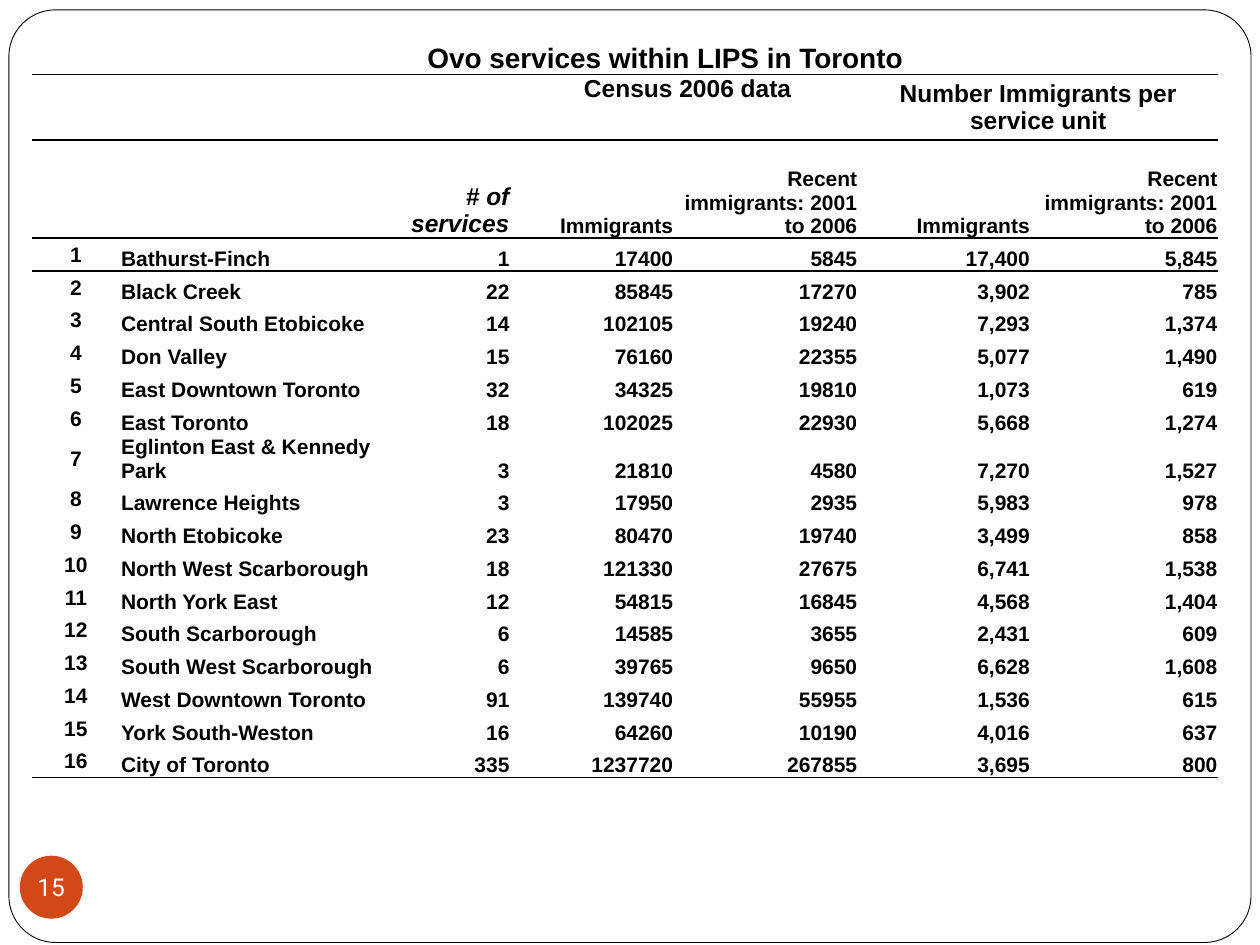
from dataclasses import dataclass

from lxml.etree import SubElement
from pptx import Presentation
from pptx.dml.color import RGBColor
from pptx.enum.shapes import MSO_SHAPE
from pptx.enum.text import MSO_ANCHOR, PP_ALIGN
from pptx.oxml.ns import qn
from pptx.util import Cm, Pt


@dataclass(frozen=True)
class Theme:
    ink: RGBColor = RGBColor(0x00, 0x00, 0x00)
    paper: RGBColor = RGBColor(0xFF, 0xFF, 0xFF)
    accent: RGBColor = RGBColor(0xD3, 0x48, 0x17)
    title_size: Pt = Pt(16)
    heading_size: Pt = Pt(14)
    body_size: Pt = Pt(12)
    rule_width: Pt = Pt(1)
    frame_width: Pt = Pt(0.5)
    table_font: str = "Arial"
    number_font: str = "Roboto"


theme = Theme()

NO_STYLE_NO_GRID = "{2D5ABB26-0587-4C30-8999-92F81FD0307C}"
COLUMN_WIDTHS = (1.78, 5.28, 2.59, 3.3, 3.71, 3.48, 3.78)
HEADER_HEIGHTS = (0.66, 1.32, 1.98)
DATA_HEIGHT = 0.66
CELL_MARGINS = {
    "margin_left": Cm(0.02),
    "margin_right": Cm(0.02),
    "margin_top": Cm(0.02),
    "margin_bottom": Cm(0),
}

# area, number of services, immigrants, recent immigrants
AREAS = (
    ("Bathurst-Finch", 1, 17400, 5845),
    ("Black Creek", 22, 85845, 17270),
    ("Central South Etobicoke", 14, 102105, 19240),
    ("Don Valley", 15, 76160, 22355),
    ("East Downtown Toronto", 32, 34325, 19810),
    ("East Toronto", 18, 102025, 22930),
    ("Eglinton East & Kennedy Park", 3, 21810, 4580),
    ("Lawrence Heights", 3, 17950, 2935),
    ("North Etobicoke", 23, 80470, 19740),
    ("North West Scarborough", 18, 121330, 27675),
    ("North York East", 12, 54815, 16845),
    ("South Scarborough", 6, 14585, 3655),
    ("South West Scarborough", 6, 39765, 9650),
    ("West Downtown Toronto", 91, 139740, 55955),
    ("York South-Weston", 16, 64260, 10190),
    ("City of Toronto", 335, 1237720, 267855),
)


def write(text_frame, text, alignment, **font_values):
    paragraph = text_frame.paragraphs[0]
    paragraph.alignment = alignment
    run = paragraph.add_run()
    run.text = text
    color = font_values.pop("color", theme.ink)
    for name, value in font_values.items():
        setattr(run.font, name, value)
    run.font.color.rgb = color


def add_rule(cell, side):
    """Draw a border on one side of a cell; side is lnT or lnB."""
    properties = cell._tc.get_or_add_tcPr()
    line = SubElement(properties, qn(f"a:{side}"), w=str(theme.rule_width))
    fill = SubElement(line, qn("a:solidFill"))
    SubElement(fill, qn("a:srgbClr"), val=str(theme.ink))


presentation = Presentation()
presentation.slide_width = Cm(25.4)
presentation.slide_height = Cm(19.05)
slide = presentation.slides.add_slide(presentation.slide_layouts[6])

frame = slide.shapes.add_shape(
    MSO_SHAPE.ROUNDED_RECTANGLE, Cm(0.18), Cm(0.2), Cm(25.04), Cm(18.8))
frame.adjustments[0] = 0.05
frame.shadow.inherit = False
frame.fill.solid()
frame.fill.fore_color.rgb = theme.paper
frame.line.color.rgb = theme.ink
frame.line.width = theme.frame_width

row_heights = HEADER_HEIGHTS + (DATA_HEIGHT,) * len(AREAS)
table_frame = slide.shapes.add_table(
    len(row_heights), len(COLUMN_WIDTHS), Cm(0.64), Cm(0.84),
    Cm(sum(COLUMN_WIDTHS)), Cm(sum(row_heights)))
table_frame.element.find(f".//{qn('a:tableStyleId')}").text = NO_STYLE_NO_GRID
table = table_frame.table
table.first_row = False
table.horz_banding = False
for column, width in zip(table.columns, COLUMN_WIDTHS):
    column.width = Cm(width)
for row, height in zip(table.rows, row_heights):
    row.height = Cm(height)

ruled_rows = {0, 1, 2, len(row_heights) - 1}
for row_index, row in enumerate(table.rows):
    for cell in row.cells:
        for name, value in CELL_MARGINS.items():
            setattr(cell, name, value)
        cell.vertical_anchor = MSO_ANCHOR.BOTTOM
        if row_index - 1 in ruled_rows:
            add_rule(cell, "lnT")
        if row_index in ruled_rows:
            add_rule(cell, "lnB")
        cell.fill.background()

# row, first column, last column, text, size, anchor
spanning_headings = (
    (0, 1, 6, "Ovo services within LIPS in Toronto ", theme.title_size, MSO_ANCHOR.BOTTOM),
    (1, 3, 4, " Census 2006 data", theme.heading_size, MSO_ANCHOR.TOP),
    (1, 5, 6, "Number Immigrants per service unit", theme.heading_size, MSO_ANCHOR.MIDDLE),
)
for row_index, first, last, text, size, anchor in spanning_headings:
    cell = table.cell(row_index, first)
    cell.merge(table.cell(row_index, last))
    cell.vertical_anchor = anchor
    write(cell.text_frame, text, PP_ALIGN.CENTER,
          name=theme.table_font, size=size, bold=True)

write(table.cell(2, 2).text_frame, "# of services", PP_ALIGN.RIGHT,
      name=theme.table_font, size=theme.heading_size, bold=True, italic=True)
for first in (3, 5):
    for offset, text in enumerate(("Immigrants", "Recent immigrants: 2001 to 2006")):
        write(table.cell(2, first + offset).text_frame, text, PP_ALIGN.RIGHT,
              name=theme.table_font, size=theme.body_size, bold=True)

alignments = (PP_ALIGN.CENTER, PP_ALIGN.LEFT) + (PP_ALIGN.RIGHT,) * 5
for number, (area, services, immigrants, recent) in enumerate(AREAS, start=1):
    row_index = len(HEADER_HEIGHTS) + number - 1
    values = (number, area, services, immigrants, recent,
              f"{immigrants / services:,.0f}", f"{recent / services:,.0f}")
    table.cell(row_index, 0).vertical_anchor = MSO_ANCHOR.MIDDLE
    for column_index, (value, alignment) in enumerate(zip(values, alignments)):
        write(table.cell(row_index, column_index).text_frame, str(value), alignment,
              name=theme.table_font, size=theme.body_size, bold=True)

# Empty cells take the body size too, so that they do not stretch their rows.
for cell in table.iter_cells():
    if not cell.text_frame.text:
        SubElement(cell.text_frame.paragraphs[0]._p, qn("a:endParaRPr"),
                   sz=str(int(theme.body_size.pt * 100)))

badge = slide.shapes.add_shape(
    MSO_SHAPE.OVAL, Cm(0.4), Cm(17.25), Cm(1.27), Cm(1.27))
badge.shadow.inherit = False
badge.fill.solid()
badge.fill.fore_color.rgb = theme.accent
badge.line.fill.background()
badge_format = {
    "margin_left": 0,
    "margin_right": 0,
    "margin_top": 0,
    "margin_bottom": 0,
    "word_wrap": False,
    "vertical_anchor": MSO_ANCHOR.MIDDLE,
}
for name, value in badge_format.items():
    setattr(badge.text_frame, name, value)
write(badge.text_frame, "15", PP_ALIGN.CENTER,
      name=theme.number_font, size=theme.heading_size, color=theme.paper)

presentation.save("out.pptx")
